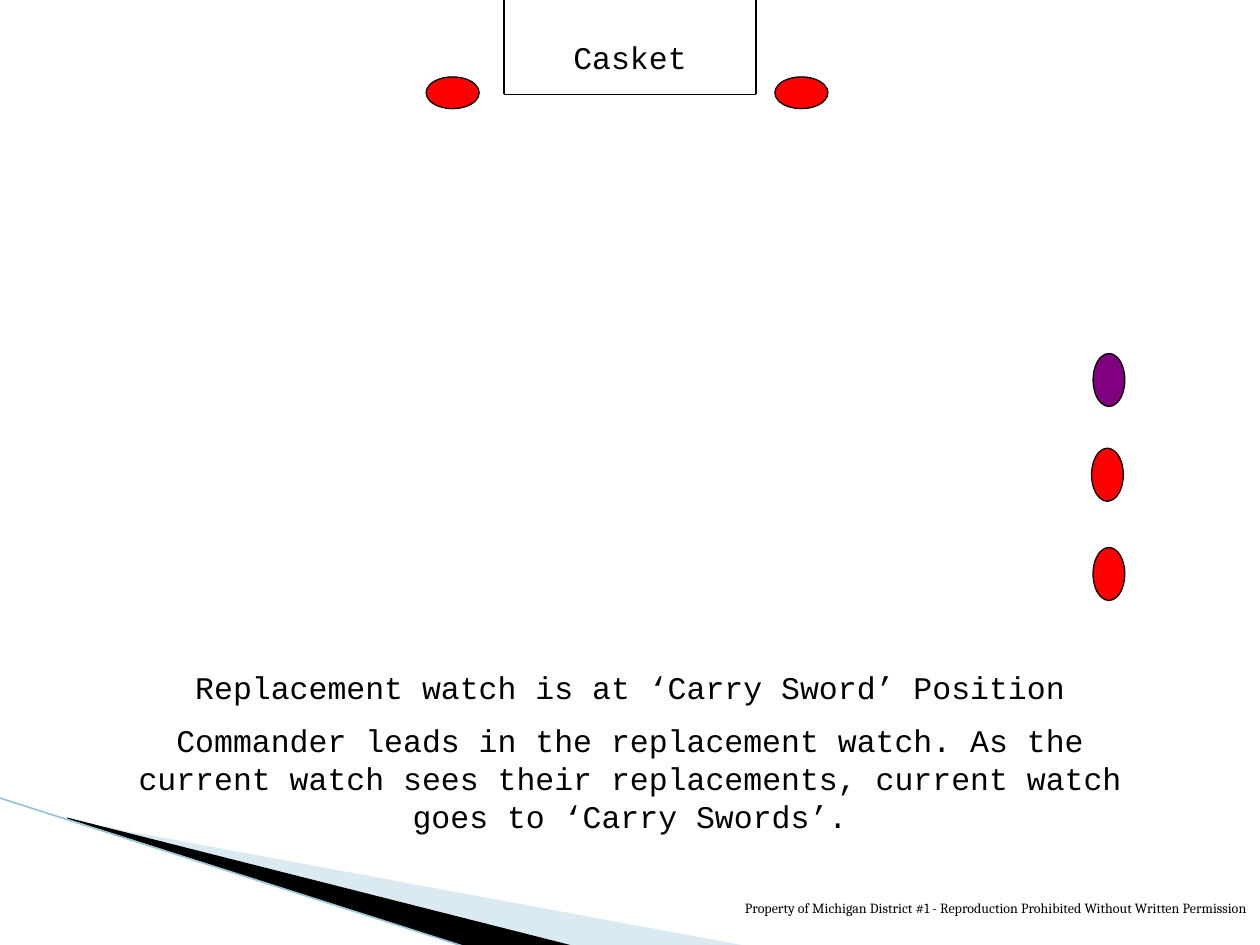
from lxml import etree
from pptx import Presentation
from pptx.dml.color import RGBColor
from pptx.enum.shapes import MSO_CONNECTOR, MSO_SHAPE
from pptx.enum.text import PP_ALIGN
from pptx.oxml.ns import qn
from pptx.util import Cm, Pt

HUES = {
    "black": "000000",
    "red": "FF0000",
    "purple": "800080",
    "pale": "A0CBDC",
    "edge": "97C5D8",
}


def color(name):
    return RGBColor.from_string(HUES[name])


def write(frame, *lines, font="Courier New", size=18, hue="black",
          align=PP_ALIGN.CENTER, gap=9):
    """Fill a text frame, with a gap in points between paragraphs."""
    frame.word_wrap = True
    for i, line in enumerate(lines):
        par = frame.add_paragraph() if i else frame.paragraphs[0]
        par.text = line
        par.alignment = align
        par.space_before = Pt(gap if i else 0)
        par.font.name = font
        par.font.size = Pt(size)
        par.font.color.rgb = color(hue)


class Board:
    width = 0.75
    guard = (1.07, 0.64)

    def __init__(self, slide):
        self.shapes = slide.shapes

    def line(self, x1, y1, x2, y2, hue="black", width=width):
        line = self.shapes.add_connector(
            MSO_CONNECTOR.STRAIGHT, Cm(x1), Cm(y1), Cm(x2), Cm(y2))
        line.line.color.rgb = color(hue)
        line.line.width = Pt(width)
        etree.SubElement(line._element.spPr, qn("a:effectLst"))

    def wedge(self, points, hue, alpha=None):
        """Draw a filled outline; alpha is its opacity in percent."""
        start, *rest = [(Cm(x), Cm(y)) for x, y in points]
        form = self.shapes.build_freeform(*start)
        form.add_line_segments(rest, close=True)
        shape = form.convert_to_shape()
        shape.shadow.inherit = False
        shape.fill.solid()
        shape.fill.fore_color.rgb = color(hue)
        shape.line.fill.background()
        if alpha:
            fill = shape._element.spPr.find(qn("a:solidFill"))
            etree.SubElement(fill[0], qn("a:alpha"), val=str(alpha * 1000))

    def person(self, x, y, turn, hue="red"):
        wide, high = self.guard
        shape = self.shapes.add_shape(
            MSO_SHAPE.OVAL, Cm(x), Cm(y), Cm(wide), Cm(high))
        shape.rotation = turn
        shape.shadow.inherit = False
        shape.fill.solid()
        shape.fill.fore_color.rgb = color(hue)
        shape.line.color.rgb = color("black")
        shape.line.width = Pt(self.width)

    def text(self, x, y, wide, high, *lines, **style):
        box = self.shapes.add_textbox(Cm(x), Cm(y), Cm(wide), Cm(high))
        write(box.text_frame, *lines, **style)


def main():
    deck = Presentation()
    deck.slide_width, deck.slide_height = Cm(25.4), Cm(19.05)
    board = Board(deck.slides.add_slide(deck.slide_layouts[6]))

    # Corner swoosh
    board.wedge([(1.4, 16.54), (15.11, 19.08), (11.58, 19.08), (1.4, 16.51)],
                "pale", alpha=40)
    board.wedge([(1.35, 16.48), (11.61, 19.08), (9.45, 19.1), (1.37, 16.51)],
                "black")
    board.line(-0.03, 16.08, 9.42, 19.1, hue="edge", width=0.95)

    # Casket, open at the top edge
    left, right, foot = 10.16, 15.24, 1.9
    board.line(left, foot, right, foot)
    for x in (left, right):
        board.line(x, foot, x, 0)
    board.text(10.9, 0.64, 3.6, 1.02, "Casket")

    # Commander, then the replacement watch behind
    board.person(21.82, 7.34, 90, hue="purple")
    for x, y in ((21.82, 11.25), (21.79, 9.25)):
        board.person(x, y, 270)

    board.text(
        2.54, 13.34, 20.32, 2.92,
        "Replacement watch is at ‘Carry Sword’ Position",
        "Commander leads in the replacement watch. As the current watch "
        "sees their replacements, current watch goes to ‘Carry Swords’.")

    # Current watch beside the casket
    for x in (8.59, 15.62):
        board.person(x, 1.55, 180)

    board.text(
        11, 18.01, 14.4, 0.66,
        "Property of Michigan District #1 - Reproduction Prohibited "
        "Without Written Permission",
        font="Cambria", size=8, align=PP_ALIGN.RIGHT)

    deck.save("out.pptx")


if __name__ == "__main__":
    main()
